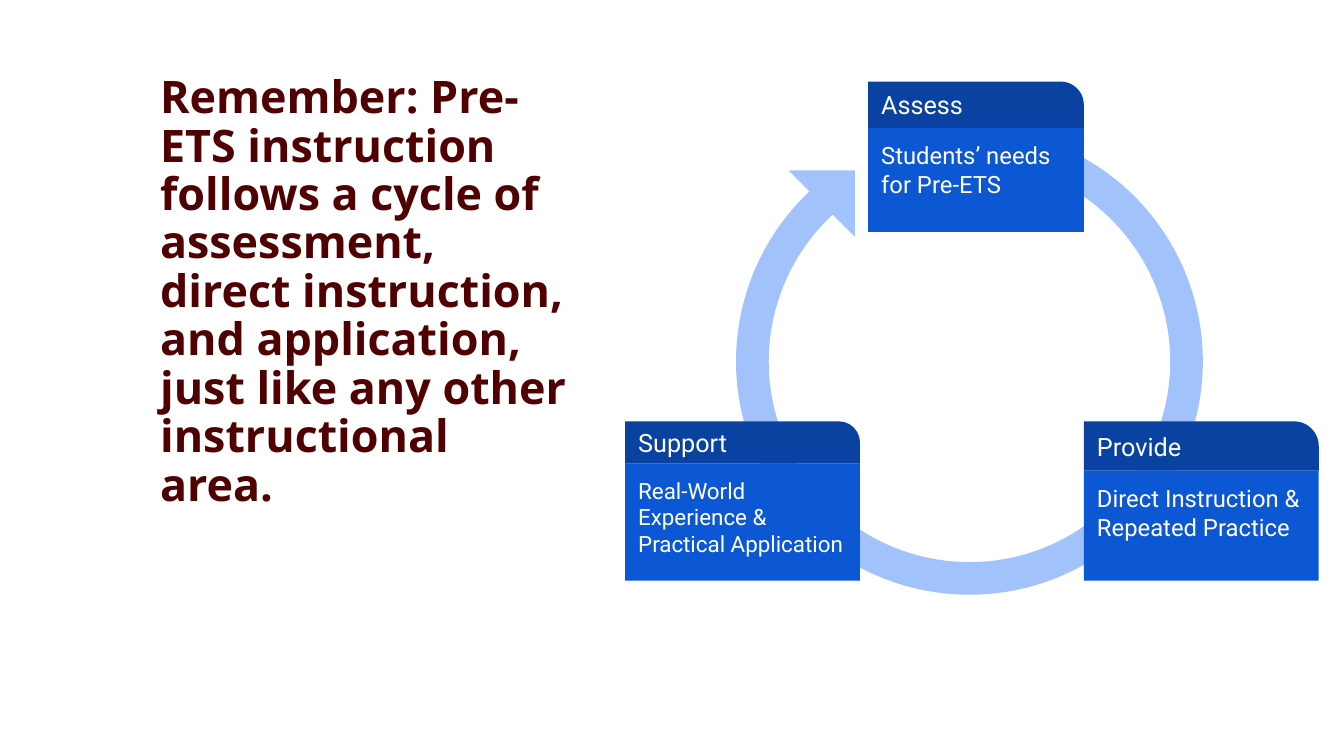
from dataclasses import dataclass

from pptx import Presentation
from pptx.dml.color import RGBColor
from pptx.enum.shapes import MSO_SHAPE
from pptx.enum.text import MSO_ANCHOR, PP_ALIGN
from pptx.util import Inches, Pt


@dataclass(frozen=True)
class Theme:
    title_color: str = "500000"
    ring: str = "A1C2FA"
    card_head: str = "0942A1"
    card_body: str = "0C57D3"
    card_text: str = "FFFFFF"
    title_font: str = "Open Sans"
    card_font: str = "Roboto"
    title_size: int = 32
    head_size: int = 18


THEME = Theme()

# heading, text, text size, (left, top, width, height), heading height
CARDS = [
    ("Provide", "Direct Instruction & Repeated Practice", 17,
     (10.75, 4.18, 2.33, 1.58), 0.49),
    ("Assess", "Students’ needs for Pre-ETS", 17,
     (8.61, 0.81, 2.14, 1.49), 0.46),
    ("Support", "Real-World Experience & Practical Application", 16,
     (6.2, 4.18, 2.33, 1.58), 0.42),
]


def write(shape, text, *, font, size, color, bold=False, anchor=MSO_ANCHOR.TOP,
          inset=(0.13, 0.13), line_spacing=1.0):
    frame = shape.text_frame
    frame.word_wrap = True
    frame.vertical_anchor = anchor
    frame.margin_left = frame.margin_right = Inches(inset[0])
    frame.margin_top = frame.margin_bottom = Inches(inset[1])
    para = frame.paragraphs[0]
    para.alignment = PP_ALIGN.LEFT
    para.line_spacing = line_spacing
    span = para.add_run()
    span.text = text
    span.font.name = font
    span.font.size = Pt(size)
    span.font.bold = bold
    span.font.color.rgb = RGBColor.from_string(color)


def add_filled(shapes, kind, box, color, adjustments=(), rotation=0):
    shape = shapes.add_shape(kind, *map(Inches, box))
    shape.shadow.inherit = False
    shape.fill.solid()
    shape.fill.fore_color.rgb = RGBColor.from_string(color)
    shape.line.fill.background()
    shape.rotation = rotation
    for index, value in enumerate(adjustments):
        shape.adjustments[index] = value
    return shape


def add_title(page, box, text):
    title = page.shapes.add_textbox(*map(Inches, box))
    write(title, text, font=THEME.title_font, size=THEME.title_size,
          color=THEME.title_color, bold=True, anchor=MSO_ANCHOR.MIDDLE,
          inset=(0.1, 0.05), line_spacing=0.9)


def add_cycle_ring(page, box):
    """Draw the open ring and the arrowhead at its upper left end."""
    left, top, width, height = box
    ring = page.shapes.add_group_shape().shapes
    add_filled(ring, MSO_SHAPE.BLOCK_ARC, (left, top, width, height), THEME.ring,
               adjustments=(54, 30.13, 0.07), rotation=180)
    add_filled(ring, MSO_SHAPE.RIGHT_TRIANGLE, (left + 0.52, top + 0.42, 0.66, 0.66),
               THEME.ring, rotation=180)


def add_card(page, box, heading, text, text_size, head_height):
    left, top, width, height = box
    card = page.shapes.add_group_shape().shapes
    body = add_filled(card, MSO_SHAPE.RECTANGLE,
                      (left, top + head_height, width, height - head_height),
                      THEME.card_body)
    write(body, text, font=THEME.card_font, size=text_size, color=THEME.card_text)
    head = add_filled(card, MSO_SHAPE.ROUND_1_RECTANGLE,
                      (left, top, width, head_height), THEME.card_head,
                      adjustments=(0.5,))
    write(head, heading, font=THEME.card_font, size=THEME.head_size,
          color=THEME.card_text, anchor=MSO_ANCHOR.MIDDLE)


def main():
    deck = Presentation()
    deck.slide_width, deck.slide_height = Inches(13.33), Inches(7.5)
    page = deck.slides.add_slide(deck.slide_layouts[6])
    add_title(page, (1.49, 0.3, 4.3, 5.21),
              "Remember: Pre-ETS instruction follows a cycle of assessment, "
              "direct instruction, and application, just like any other "
              "instructional area.")
    add_cycle_ring(page, (7.3, 1.27, 4.63, 4.63))
    for heading, text, text_size, box, head_height in CARDS:
        add_card(page, box, heading, text, text_size, head_height)
    deck.save("out.pptx")


if __name__ == "__main__":
    main()
